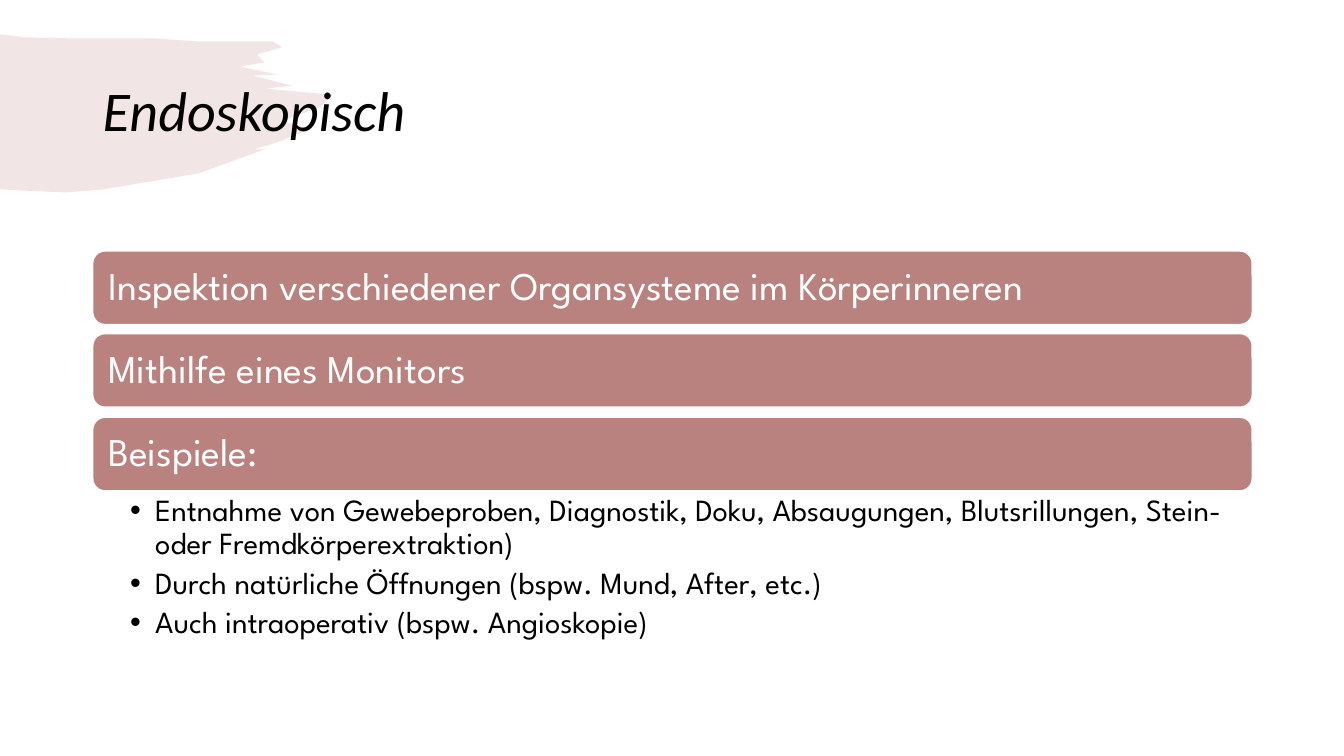
import lxml.etree
import pptx
import pptx.dml.color
import pptx.enum.shapes
import pptx.enum.text
import pptx.oxml.ns
import pptx.util

PX = 9144
COLORS = {"rose": "BA827F", "white": "FFFFFF", "black": "000000"}
BODY_FONT = "League Spartan"
BRUSH_OUTLINE = [
    (0, 34), (25, 37), (66, 38), (151, 38), (194, 41), (270, 41), (280, 47),
    (255, 54), (262, 62), (238, 66), (275, 74), (251, 75), (290, 85),
    (263, 88), (330, 94), (318, 106), (280, 120), (308, 128), (273, 142),
    (252, 148), (263, 148), (197, 172), (102, 188), (65, 191), (0, 188),
]
BARS = [
    "Inspektion verschiedener Organsysteme im Körperinneren",
    "Mithilfe eines Monitors",
    "Beispiele:",
]
EXAMPLES = [
    "Entnahme von Gewebeproben, Diagnostik, Doku, Absaugungen, Blutsrillungen, Stein- oder Fremdkörperextraktion)",
    "Durch natürliche Öffnungen (bspw. Mund, After, etc.)",
    "Auch intraoperativ (bspw. Angioskopie)",
]


def rgb(name):
    return pptx.dml.color.RGBColor.from_string(COLORS[name])


def write_text(shape, lines, size, color="black", font=BODY_FONT, italic=False,
               insets=(10, 5, 10, 5), middle=True, bullet_indent=0, space_after=0):
    frame = shape.text_frame
    frame.word_wrap = True
    frame.margin_left, frame.margin_top, frame.margin_right, frame.margin_bottom = (
        inset * PX for inset in insets)
    anchors = pptx.enum.text.MSO_ANCHOR
    frame.vertical_anchor = anchors.MIDDLE if middle else anchors.TOP
    frame.text = "\n".join(lines)
    for paragraph in frame.paragraphs:
        paragraph.alignment = pptx.enum.text.PP_ALIGN.LEFT
        paragraph.line_spacing = 0.9
        paragraph.space_after = pptx.util.Pt(space_after)
        if bullet_indent:
            properties = paragraph._p.get_or_add_pPr()
            properties.set("marL", str(bullet_indent * PX))
            properties.set("indent", str(-bullet_indent * PX))
            for tag, key, value in (("a:buFont", "typeface", "Arial"), ("a:buChar", "char", "•")):
                lxml.etree.SubElement(properties, pptx.oxml.ns.qn(tag)).set(key, value)
        for run in paragraph.runs:
            run.font.size = pptx.util.Pt(size)
            run.font.name = font
            run.font.italic = italic
            run.font.color.rgb = rgb(color)


presentation = pptx.Presentation()
presentation.slide_width = 1333 * PX
presentation.slide_height = 750 * PX
slide = presentation.slides.add_slide(presentation.slide_layouts[6])
shapes = slide.shapes

builder = shapes.build_freeform(*BRUSH_OUTLINE[0], scale=PX)
builder.add_line_segments(BRUSH_OUTLINE[1:], close=True)
brush = builder.convert_to_shape()
brush.shadow.inherit = False
brush.line.fill.background()
brush.fill.solid()
brush.fill.fore_color.rgb = rgb("rose")
brush_color = brush._element.spPr.find(".//" + pptx.oxml.ns.qn("a:srgbClr"))
lxml.etree.SubElement(brush_color, pptx.oxml.ns.qn("a:alpha")).set("val", "20000")

title = shapes.add_textbox(92 * PX, 40 * PX, 1150 * PX, 145 * PX)
write_text(title, ["Endoskopisch"], 40, font="Calibri", italic=True)

for index, label in enumerate(BARS):
    top = 249 + index * 165 // 2
    bar = shapes.add_shape(pptx.enum.shapes.MSO_SHAPE.ROUNDED_RECTANGLE,
                           92 * PX, top * PX, 1150 * PX, 73 * PX)
    bar.shadow.inherit = False
    bar.fill.solid()
    bar.fill.fore_color.rgb = rgb("rose")
    bar.line.color.rgb = rgb("white")
    bar.line.width = pptx.util.Pt(1)
    write_text(bar, [label], 28, color="white", insets=(12, 12, 12, 12))

examples = shapes.add_textbox(92 * PX, 487 * PX, 1150 * PX, 158 * PX)
write_text(examples, EXAMPLES, 22, insets=(37, 4, 22, 4), middle=False,
           bullet_indent=25, space_after=4.4)

presentation.save("out.pptx")
